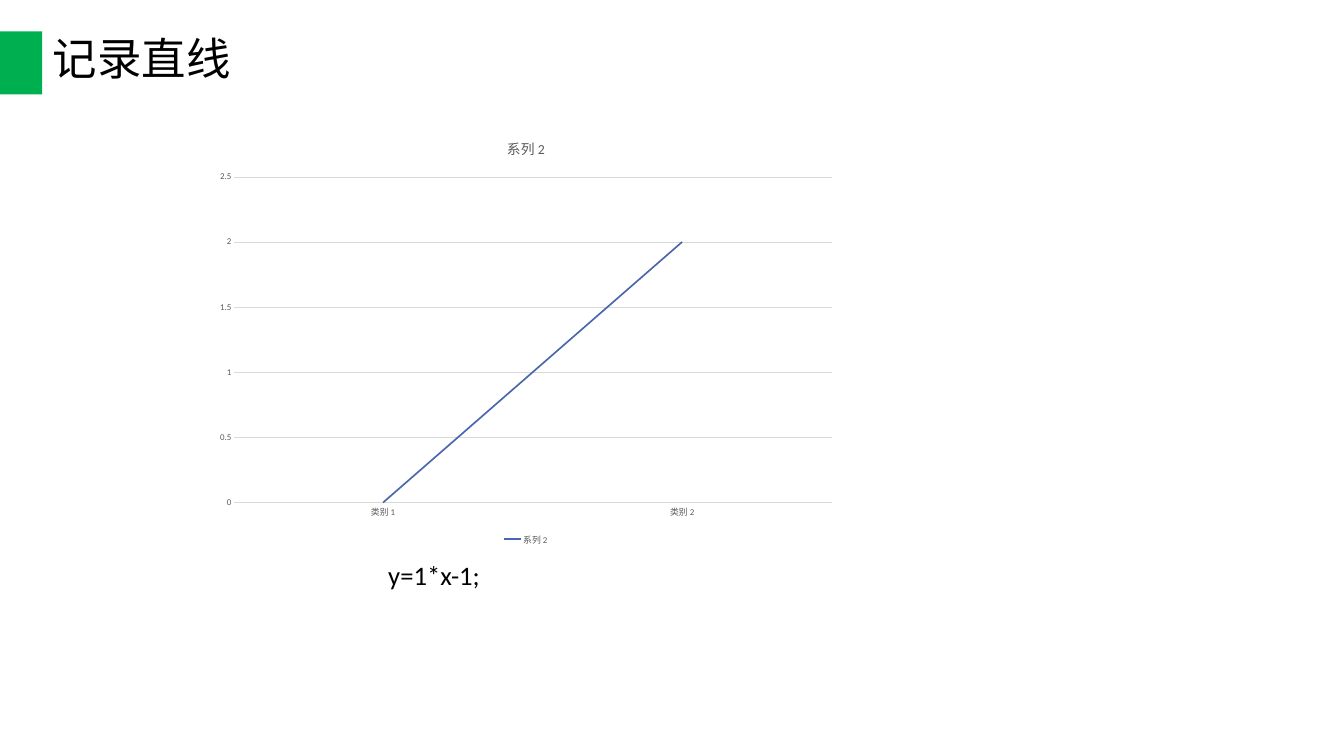
import pptx
import pptx.chart.data
import pptx.dml.color
import pptx.enum.chart
import pptx.enum.shapes
import pptx.enum.text
import pptx.util

Pt = pptx.util.Pt
RGBColor = pptx.dml.color.RGBColor

GREEN = RGBColor(0x00, 0xB0, 0x50)
BLUE = RGBColor(0x4A, 0x66, 0xAC)
BLACK = RGBColor(0x00, 0x00, 0x00)
DARK_GRAY = RGBColor(0x59, 0x59, 0x59)
LIGHT_GRAY = RGBColor(0xD9, 0xD9, 0xD9)
FONT = "Calibri"


def format_font(font, size, color):
    """Apply the slide's typeface with a size and colour."""
    font.name = FONT
    font.size = Pt(size)
    font.bold = False
    font.color.rgb = color


def format_line(line, color, width):
    """Give a line a solid colour and a width."""
    line.color.rgb = color
    line.width = Pt(width)


def write_text(frame, text, size=36, color=BLACK, line_spacing=0.9):
    """Write one left-aligned, vertically centred paragraph."""
    frame.word_wrap = True
    frame.auto_size = pptx.enum.text.MSO_AUTO_SIZE.NONE
    frame.vertical_anchor = pptx.enum.text.MSO_ANCHOR.MIDDLE
    paragraph = frame.paragraphs[0]
    paragraph.alignment = pptx.enum.text.PP_ALIGN.LEFT
    paragraph.line_spacing = line_spacing
    run = paragraph.add_run()
    run.text = text
    format_font(run.font, size, color)


def add_header(slide, left, top, width, height):
    """Place the green marker and the title beside it."""
    marker_width = 57
    marker = slide.shapes.add_shape(
        pptx.enum.shapes.MSO_SHAPE.RECTANGLE,
        Pt(left), Pt(top + 3.5), Pt(marker_width), Pt(85))
    marker.shadow.inherit = False
    marker.fill.solid()
    marker.fill.fore_color.rgb = GREEN
    marker.line.fill.background()
    title = slide.shapes.title
    title.left, title.top = Pt(left + marker_width + 7), Pt(top)
    title.width, title.height = Pt(width - marker_width - 7), Pt(height)
    write_text(title.text_frame, "记录直线", size=60)


def add_line_chart(slide, left, top, width, height):
    """Place the line chart with its title, axes and legend."""
    data = pptx.chart.data.CategoryChartData()
    data.categories = ["类别 1", "类别 2"]
    data.add_series("系列 2", (0, 2))
    chart = slide.shapes.add_chart(
        pptx.enum.chart.XL_CHART_TYPE.LINE,
        Pt(left), Pt(top), Pt(width), Pt(height), data).chart
    format_font(chart.font, 10, BLACK)

    chart.has_title = True
    title_run = chart.chart_title.text_frame.paragraphs[0].add_run()
    title_run.text = "系列 2"
    format_font(title_run.font, 18.6, DARK_GRAY)
    chart.chart_title.include_in_layout = False

    chart.has_legend = True
    chart.legend.position = pptx.enum.chart.XL_LEGEND_POSITION.BOTTOM
    chart.legend.include_in_layout = False
    format_font(chart.legend.font, 12, DARK_GRAY)

    category_axis, value_axis = chart.category_axis, chart.value_axis
    for axis in (category_axis, value_axis):
        axis.major_tick_mark = pptx.enum.chart.XL_TICK_MARK.NONE
        axis.minor_tick_mark = pptx.enum.chart.XL_TICK_MARK.NONE
        format_font(axis.tick_labels.font, 12, DARK_GRAY)
    format_line(category_axis.format.line, LIGHT_GRAY, 0.75)
    value_axis.format.line.fill.background()
    value_axis.has_major_gridlines = True
    format_line(value_axis.major_gridlines.format.line, LIGHT_GRAY, 0.75)
    value_axis.minimum_scale = 0
    value_axis.maximum_scale = 2.5
    value_axis.major_unit = 0.5

    plot = chart.plots[0]
    plot.vary_by_categories = False
    series = plot.series[0]
    series.smooth = False
    series.marker.style = pptx.enum.chart.XL_MARKER_STYLE.NONE
    format_line(series.format.line, BLUE, 2.25)


def add_equation(slide, left, top, width, height):
    """Place the line's equation below the chart."""
    box = slide.shapes.add_textbox(Pt(left), Pt(top), Pt(width), Pt(height))
    write_text(box.text_frame, "y=1*x-1;")


def main():
    """Build and save the slide."""
    presentation = pptx.Presentation()
    presentation.slide_width = Pt(1814.4)
    presentation.slide_height = Pt(1020.24)
    slide = presentation.slides.add_slide(presentation.slide_layouts[5])
    add_header(slide, 0, 39, 1335, 88)
    add_line_chart(slide, 280, 166.5, 860, 573)
    add_equation(slide, 517, 739.5, 880, 79)
    presentation.save("out.pptx")


if __name__ == "__main__":
    main()
